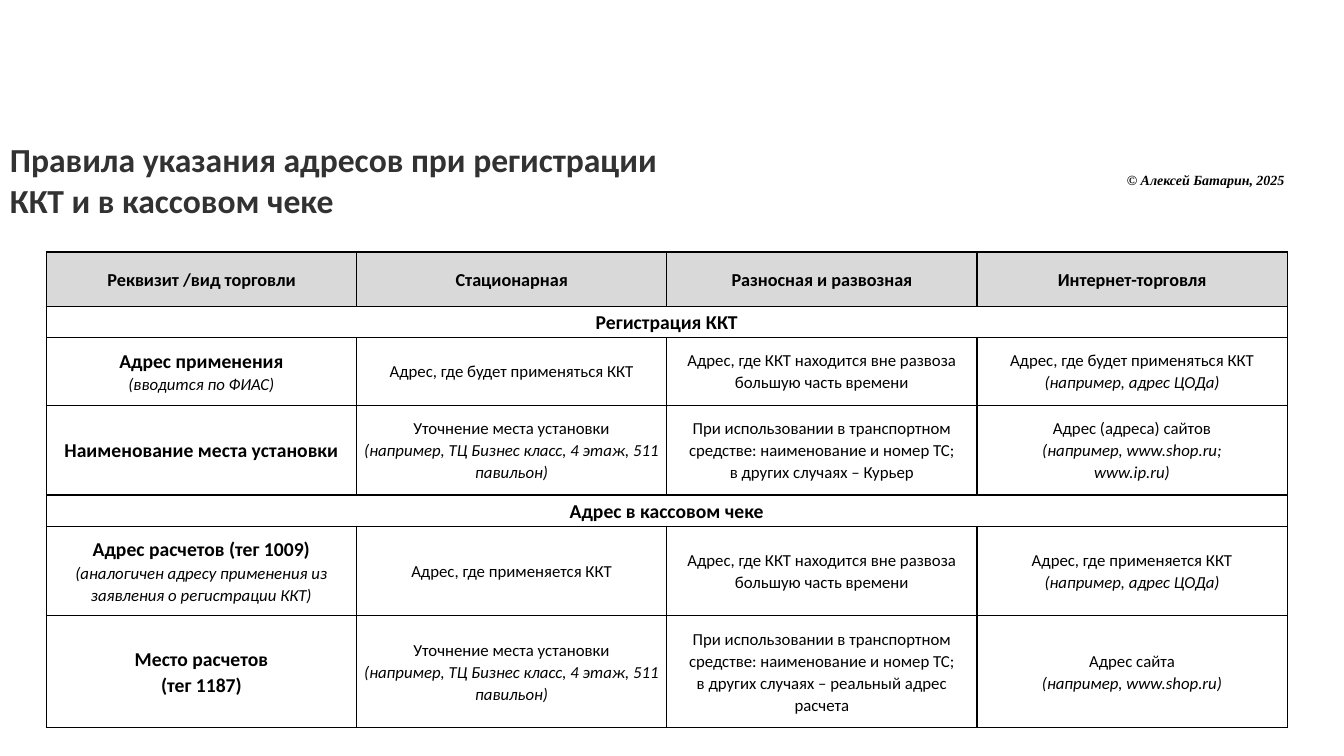
from dataclasses import dataclass

from lxml.etree import SubElement as sub_element
from pptx import Presentation
from pptx.dml.color import RGBColor as Rgb
from pptx.enum.text import MSO_ANCHOR as Anchor, PP_ALIGN as Align
from pptx.oxml.ns import qn
from pptx.util import Pt

COLORS = {"title": "323232", "ink": "000000", "header": "D9D9D9", "body": "FFFFFF"}

FORMATS = {
    "title": {"name": "Calibri", "size": Pt(24), "bold": True, "italic": False},
    "credit": {"name": "Times New Roman", "size": Pt(10), "bold": True, "italic": True},
    "header": {"name": "Calibri", "size": Pt(13), "bold": True, "italic": False},
    "section": {"name": "Calibri", "size": Pt(14), "bold": True, "italic": False},
    "plain": {"name": "Calibri", "size": Pt(12), "bold": False, "italic": False},
    "example": {"name": "Calibri", "size": Pt(12), "bold": False, "italic": True},
}


@dataclass(frozen=True)
class Span:
    text: str
    style: str = "plain"


@dataclass(frozen=True)
class Label:
    left: float
    top: float
    width: float
    height: float
    span: Span
    color: str


@dataclass(frozen=True)
class Row:
    height: float
    cells: list  # each cell is a list of paragraphs, each paragraph a list of spans
    fill: str = "body"


def lines(*spans: Span) -> list:
    """One paragraph for each span."""
    return [[span] for span in spans]


def add_spans(para, spans: list, color: str) -> None:
    for span in spans:
        for index, part in enumerate(span.text.split("\n")):
            if index:
                para.add_line_break()
            run = para.add_run()
            run.text = part
            for name, value in FORMATS[span.style].items():
                setattr(run.font, name, value)
            run.font.color.rgb = Rgb.from_string(COLORS[color])


def add_label(page, label: Label) -> None:
    box = page.shapes.add_textbox(
        Pt(label.left), Pt(label.top), Pt(label.width), Pt(label.height))
    box.text_frame.word_wrap = True
    add_spans(box.text_frame.paragraphs[0], [label.span], label.color)


def add_borders(cell) -> None:
    properties = cell._tc.get_or_add_tcPr()
    for side in ("a:lnL", "a:lnR", "a:lnT", "a:lnB"):
        line = sub_element(properties, qn(side), w=str(Pt(1)))
        fill = sub_element(line, qn("a:solidFill"))
        sub_element(fill, qn("a:srgbClr"), val=COLORS["ink"])


def format_cell(cell, fill: str) -> None:
    layout = {"margin_left": Pt(5), "margin_right": Pt(5), "margin_top": 0,
              "margin_bottom": 0, "vertical_anchor": Anchor.MIDDLE}
    for name, value in layout.items():
        setattr(cell, name, value)
    add_borders(cell)
    cell.fill.solid()
    cell.fill.fore_color.rgb = Rgb.from_string(COLORS[fill])


def fill_cell(cell, paragraphs: list) -> None:
    frame = cell.text_frame
    for index, spans in enumerate(paragraphs):
        para = frame.add_paragraph() if index else frame.paragraphs[0]
        para.alignment = Align.CENTER
        para.line_spacing = 1.07
        add_spans(para, spans, "ink")


def add_rules_table(page, rows: list, columns: int = 4) -> None:
    column_width = 221.6
    table = page.shapes.add_table(
        len(rows), columns, Pt(33.1), Pt(180), Pt(column_width * columns),
        Pt(sum(row.height for row in rows))).table
    for column in table.columns:
        column.width = Pt(column_width)
    for index, row in enumerate(rows):
        table.rows[index].height = Pt(row.height)
        for column in range(columns):
            format_cell(table.cell(index, column), row.fill)
        if len(row.cells) == 1:
            table.cell(index, 0).merge(table.cell(index, columns - 1))
        for column, paragraphs in enumerate(row.cells):
            fill_cell(table.cell(index, column), paragraphs)


# Wording shared by several cells
HOME_ADDRESS = lines(Span("Адрес, где ККТ находится вне развоза большую часть времени"))
PLACE_DETAILS = lines(
    Span("Уточнение места установки"),
    Span("(например, ТЦ Бизнес класс, 4 этаж, 511 павильон)", "example"))
DATA_CENTRE = Span("(например, адрес ЦОДа)", "example")
IN_VEHICLE = Span("При использовании в транспортном средстве: наименование и номер ТС;")

HEADERS = ["Реквизит /вид торговли", "Стационарная", "Разносная и развозная",
           "Интернет-торговля"]

ROWS = [
    Row(39, [lines(Span(text, "header")) for text in HEADERS], "header"),
    # Registration
    Row(22.3, [lines(Span("Регистрация ККТ", "section"))]),
    Row(48.2, [
        lines(Span("Адрес применения", "section"), Span("(вводится по ФИАС)", "example")),
        lines(Span("Адрес, где будет применяться ККТ")),
        HOME_ADDRESS,
        lines(Span("Адрес, где будет применяться ККТ"), DATA_CENTRE),
    ]),
    Row(64.1, [
        lines(Span("Наименование места установки", "section")),
        PLACE_DETAILS,
        lines(IN_VEHICLE, Span("в других случаях – Курьер")),
        lines(Span("Адрес (адреса) сайтов"), Span("(например, www.shop.ru;", "example"),
              Span("www.ip.ru)", "example")),
    ]),
    # Receipt
    Row(22.3, [lines(Span("Адрес в кассовом чеке", "section"))]),
    Row(64.1, [
        [[Span("Адрес расчетов (тег 1009) ", "section"),
          Span("(аналогичен адресу применения из заявления о регистрации ККТ)", "example")]],
        lines(Span("Адрес, где применяется ККТ")),
        HOME_ADDRESS,
        lines(Span("Адрес, где применяется ККТ"), DATA_CENTRE),
    ]),
    Row(79.9, [
        lines(Span("Место расчетов\n(тег 1187)", "section")),
        PLACE_DETAILS,
        lines(IN_VEHICLE, Span("в других случаях – реальный адрес расчета")),
        lines(Span("Адрес сайта"), Span("(например, www.shop.ru)", "example")),
    ]),
]

LABELS = [
    Label(0, 95.8, 480, 65.5, Span(
        "Правила указания адресов при регистрации ККТ и в кассовом чеке", "title"), "title"),
    Label(797.8, 118.8, 162, 19.4, Span("© Алексей Батарин, 2025", "credit"), "ink"),
]


def main() -> None:
    deck = Presentation()
    deck.slide_width, deck.slide_height = Pt(960), Pt(540)
    page = deck.slides.add_slide(deck.slide_layouts[6])
    for label in LABELS:
        add_label(page, label)
    add_rules_table(page, ROWS)
    deck.save("out.pptx")


if __name__ == "__main__":
    main()
